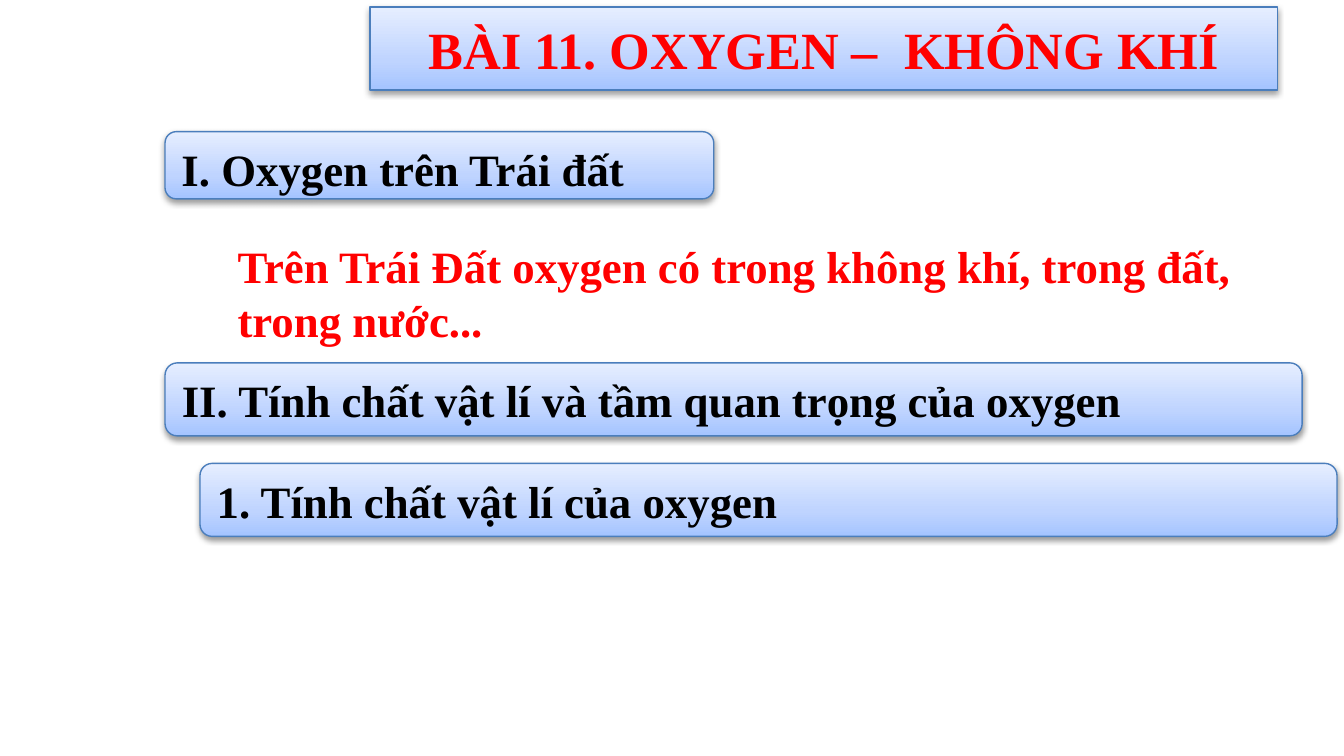
from copy import deepcopy

from pptx import Presentation
from pptx.dml.color import RGBColor
from pptx.enum.shapes import MSO_SHAPE as Shape
from pptx.enum.text import MSO_ANCHOR as Anchor, MSO_AUTO_SIZE as AutoSize, PP_ALIGN as Align
from pptx.oxml import parse_xml
from pptx.oxml.ns import nsdecls, qn
from pptx.util import Cm, Pt

FONT = "Times New Roman"
RED = RGBColor(0xFF, 0x00, 0x00)
BLACK = RGBColor(0x00, 0x00, 0x00)
BORDER = RGBColor(0x4B, 0x7E, 0xBC)
GRADIENT = (
    (0, RGBColor(0xA4, 0xC4, 0xFF)),
    (0.35, RGBColor(0xBF, 0xD4, 0xFF)),
    (1, RGBColor(0xE6, 0xEE, 0xFF)),
)

# Headings: text, left, top, width, height in centimetres
HEADINGS = (
    ("I. Oxygen trên Trái đất", 3.12, 2.49, 10.37, 1.27),
    ("II. Tính chất vật lí và tầm quan trọng của oxygen", 3.12, 6.86, 21.49, 1.38),
    ("1. Tính chất vật lí của oxygen", 3.78, 8.76, 21.49, 1.38),
)


def place(shape, left, top, width, height):
    shape.left, shape.top = Cm(left), Cm(top)
    shape.width, shape.height = Cm(width), Cm(height)


def write_text(shape, text, size, color, align, anchor=Anchor.TOP):
    frame = shape.text_frame
    frame.text = text
    frame.word_wrap = True
    frame.vertical_anchor = anchor
    paragraph = frame.paragraphs[0]
    paragraph.alignment = align
    font = paragraph.runs[0].font
    font.name, font.size, font.bold = FONT, Pt(size), True
    font.color.rgb = color


def style_panel(shape):
    """Give a shape the blue upward gradient, thin border and soft shadow."""
    properties = shape.element.spPr
    shape.fill.gradient()
    shape.fill.gradient_angle = 90
    stop_list = properties.find(".//" + qn("a:gsLst"))
    stop_list.append(deepcopy(stop_list[0]))
    for stop, (position, color) in zip(shape.fill.gradient_stops, GRADIENT):
        stop.position = position
        stop.color.rgb = color
    shape.line.color.rgb = BORDER
    shape.line.width = Pt(0.75)
    shape.shadow.inherit = False
    properties.find(qn("a:effectLst")).append(parse_xml(
        f'<a:outerShdw {nsdecls("a")} blurRad="40000" dist="20000" dir="5400000" rotWithShape="0">'
        '<a:srgbClr val="000000"><a:alpha val="38000"/></a:srgbClr></a:outerShdw>'
    ))


def add_title(slide, text):
    title = slide.shapes.title
    place(title, 6.99, 0.13, 17.15, 1.57)
    # Round the corners of the placeholder
    title.element.spPr.find(qn("a:xfrm")).addnext(parse_xml(
        f'<a:prstGeom {nsdecls("a")} prst="roundRect"><a:avLst/></a:prstGeom>'
    ))
    style_panel(title)
    write_text(title, text, 28, RED, Align.CENTER, Anchor.MIDDLE)
    title.text_frame.auto_size = AutoSize.NONE


def add_heading(slide, text, *box):
    heading = slide.shapes.add_shape(Shape.ROUNDED_RECTANGLE, *map(Cm, box))
    style_panel(heading)
    write_text(heading, text, 24, BLACK, Align.JUSTIFY)


def add_body(slide, text, *box):
    body = slide.shapes.add_textbox(*map(Cm, box))
    write_text(body, text, 24, RED, Align.LEFT)
    body.text_frame.auto_size = AutoSize.SHAPE_TO_FIT_TEXT


def main():
    presentation = Presentation()
    presentation.slide_width, presentation.slide_height = Cm(25.4), Cm(14.29)
    slide = presentation.slides.add_slide(presentation.slide_layouts[5])

    # Lesson title and section headings
    add_title(slide, "BÀI 11. OXYGEN –  KHÔNG KHÍ")
    for heading in HEADINGS:
        add_heading(slide, *heading)

    # Content of the first section
    add_body(slide, "Trên Trái Đất oxygen có trong không khí, trong đất, trong nước...",
             4.24, 4.39, 20.37, 2.31)

    presentation.save("out.pptx")


if __name__ == "__main__":
    main()
